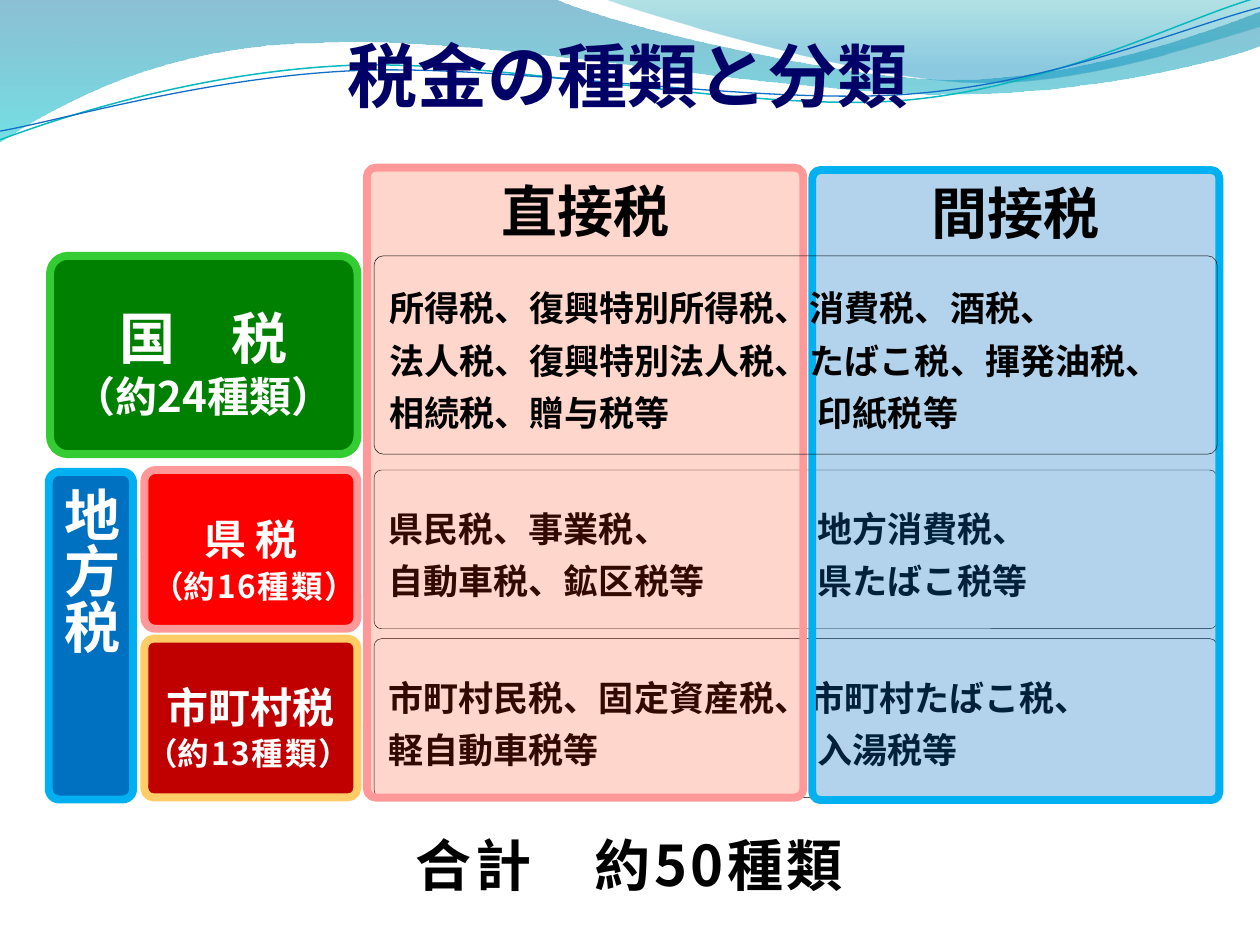
from dataclasses import dataclass
from typing import NamedTuple

from lxml import etree
from pptx import Presentation
from pptx.dml.color import RGBColor
from pptx.enum.shapes import MSO_SHAPE
from pptx.enum.text import MSO_ANCHOR, PP_ALIGN
from pptx.oxml.ns import qn
from pptx.util import Pt

ROUNDED = MSO_SHAPE.ROUNDED_RECTANGLE
TOP, MIDDLE, BOTTOM = MSO_ANCHOR.TOP, MSO_ANCHOR.MIDDLE, MSO_ANCHOR.BOTTOM
LEFT, CENTER = PP_ALIGN.LEFT, PP_ALIGN.CENTER


@dataclass(frozen=True)
class Theme:
    font: str = "Noto Sans CJK JP"
    black: str = "000000"
    white: str = "FFFFFF"
    navy: str = "000066"
    blue: str = "0070C0"
    sky: str = "00B0F0"
    orange: str = "FF3300"
    pink: str = "FF9999"
    green: str = "008000"
    lime: str = "33CC33"
    red: str = "FF0000"
    crimson: str = "C00000"
    amber: str = "FFCC66"
    title: float = 40
    heading: float = 32
    label: float = 24
    body: float = 20
    note: float = 18
    border: float = 4.5
    hairline: float = 0.25


THEME = Theme()


class Box(NamedTuple):
    left: float
    top: float
    width: float
    height: float


class Panel(NamedTuple):
    box: Box
    corner: float
    line: str
    fill: str = ""
    opacity: int = 100
    border: float = THEME.border


class Run(NamedTuple):
    text: str
    spacing: float = 0


class Line(NamedTuple):
    runs: list
    size: float


class Wave(NamedTuple):
    start: tuple
    curves: list
    line: str = ""
    width: float = 0
    stops: tuple = ()


ROW_LEFT, ROW_WIDTH, TAB = 213.8, 481.7, 245
NATIONAL_TOP, NATIONAL_HEIGHT = 146.2, 113.3
PREFECTURE_TOP, CITY_TOP, LOCAL_HEIGHT = 268.6, 365, 90.7

WAVES = [
    Wave((0, -0.7), [
        [(316.8, -0.7)], [(342.7, 12.2), (478.1, 45.4), (545.8, 45.4)],
        [(614.2, 45.4), (689.8, 18.7), (720, 6.5)], [(720.7, 25.9)],
        [(707.8, 31.7), (626.4, 54.7), (537.1, 54)],
        [(447.8, 54), (275, 20.2), (185, 24.5)],
        [(92.9, 25.2), (33.1, 59.8), (-0.7, 81.4)]],
        stops=((0, "0074A1", 45), (1, "00C6CF", 55))),
    Wave((344.9, -0.7), [
        [(366.5, 7.9), (491, 44.6), (553.7, 46.8)],
        [(616.3, 49.7), (691.9, 23), (720, 15.1)], [(720, 0)]],
        stops=((0, "00A1A9", 30), (0.8, "008BBF", 45))),
    Wave((0, 79.9), [
        [(34.6, 67), (113.8, 41), (199.4, 37.4)],
        [(284.4, 33.8), (427, 64.1), (513.4, 57.6)],
        [(599.8, 51.1), (675.4, 10.8), (718.6, -1.4)]], "0AB8BF", 0.85),
    Wave((0, 74.9), [
        [(33.8, 69.1), (118.1, 43.9), (203.8, 40.3)],
        [(290.2, 36.7), (429.8, 59.8), (516.2, 54)],
        [(601.9, 48.2), (677.5, 15.1), (720, 4.3)]], "0F6FC6", 0.75),
]


def set_opacity(shape, percents: list) -> None:
    """Give the colours of a shape's fill their opacities."""
    for color, percent in zip(shape._element.spPr.iter(qn("a:srgbClr")), percents):
        etree.SubElement(color, qn("a:alpha")).set("val", str(percent * 1000))


def draw_wave(slide, wave: Wave) -> None:
    """Draw a curved band or a curved line."""
    builder = slide.shapes.build_freeform(*map(Pt, wave.start))
    builder.add_line_segments([tuple(map(Pt, curve[-1])) for curve in wave.curves],
                              close=bool(wave.stops))
    shape = builder.convert_to_shape()
    shape.shadow.inherit = False
    segments = list(shape._element.spPr.iter(qn("a:lnTo")))
    for segment, curve in zip(segments, wave.curves):
        if len(curve) == 3:
            bezier = etree.Element(qn("a:cubicBezTo"))
            for x, y in curve:
                etree.SubElement(bezier, qn("a:pt"), x=str(Pt(x) - shape.left),
                                 y=str(Pt(y) - shape.top))
            segment.getparent().replace(segment, bezier)
    if wave.stops:
        shape.fill.gradient()
        shape.fill.gradient_angle = 270
        for stop, (position, color, _) in zip(shape.fill.gradient_stops, wave.stops):
            stop.position, stop.color.rgb = position, RGBColor.from_string(color)
        set_opacity(shape, [opacity for _, _, opacity in wave.stops])
        shape.line.fill.background()
    else:
        shape.fill.background()
        shape.line.color.rgb = RGBColor.from_string(wave.line)
        shape.line.width = Pt(wave.width)


def write(shape, lines: list, *, color: str = THEME.black, align=CENTER, anchor=MIDDLE,
          leading: float = 0, tab: float = 0, bottom: float = 3.6,
          vertical: bool = False, outline: bool = False) -> None:
    """Write formatted lines into a shape."""
    frame = shape.text_frame
    frame.word_wrap, frame.vertical_anchor = True, anchor
    frame.margin_bottom = Pt(bottom)
    if vertical:
        frame._txBody.bodyPr.set("vert", "eaVert")
    for index, line in enumerate(lines):
        paragraph = frame.add_paragraph() if index else frame.paragraphs[0]
        paragraph.alignment = align
        if leading:
            paragraph.line_spacing = Pt(leading)
        if tab and any("\t" in part.text for part in line.runs):
            tabs = etree.SubElement(paragraph._p.get_or_add_pPr(), qn("a:tabLst"))
            etree.SubElement(tabs, qn("a:tab"), pos=str(Pt(tab)), algn="l")
        for part in line.runs:
            run = paragraph.add_run()
            run.text = part.text
            font = run.font
            font.size, font.bold, font.name = Pt(line.size), True, THEME.font
            font.color.rgb = RGBColor.from_string(color)
            properties = run._r.get_or_add_rPr()
            etree.SubElement(properties, qn("a:ea"), typeface=THEME.font)
            if part.spacing:
                properties.set("spc", str(int(part.spacing * 100)))
            if outline:
                border = etree.Element(qn("a:ln"), w=str(Pt(0.5)))
                fill = etree.SubElement(border, qn("a:solidFill"))
                etree.SubElement(fill, qn("a:srgbClr"), val=THEME.white)
                properties.insert(0, border)


def draw_panel(slide, panel: Panel):
    """Draw a rounded panel and return it."""
    shape = slide.shapes.add_shape(ROUNDED, *map(Pt, panel.box))
    shape.adjustments[0] = panel.corner
    shape.shadow.inherit = False
    if panel.fill:
        shape.fill.solid()
        shape.fill.fore_color.rgb = RGBColor.from_string(panel.fill)
        if panel.opacity < 100:
            set_opacity(shape, [panel.opacity])
    else:
        shape.fill.background()
    shape.line.color.rgb = RGBColor.from_string(panel.line)
    shape.line.width = Pt(panel.border)
    return shape


def plain(text: str, size: float) -> Line:
    """Return a line made of a single run."""
    return Line([Run(text)], size)


def draw_row(slide, top: float, height: float, texts: list) -> None:
    """Draw a framed row of tax names across both columns."""
    box = Box(ROW_LEFT, top, ROW_WIDTH, height)
    shape = draw_panel(slide, Panel(box, 0.046, THEME.black, border=THEME.hairline))
    write(shape, [plain(text, THEME.body) for text in texts], align=LEFT, leading=30, tab=TAB)


def draw_text(slide, box: Box, line: Line, **style) -> None:
    """Draw a text box with one line."""
    write(slide.shapes.add_textbox(*map(Pt, box)), [line], **style)


def main() -> None:
    """Build the slide on kinds of tax."""
    presentation = Presentation()
    presentation.slide_width, presentation.slide_height = Pt(720), Pt(540)
    slide = presentation.slides.add_slide(presentation.slide_layouts[6])
    for wave in WAVES:
        draw_wave(slide, wave)
    draw_text(slide, Box(2.9, 15.1, 711.4, 55.4), plain("税金の種類と分類", THEME.title),
              color=THEME.navy, outline=True)
    draw_row(slide, PREFECTURE_TOP, LOCAL_HEIGHT,
             ["県民税、事業税、\t地方消費税、", "自動車税、鉱区税等\t県たばこ税等"])
    draw_row(slide, CITY_TOP, LOCAL_HEIGHT,
             ["市町村民税、固定資産税、市町村たばこ税、", "軽自動車税等\t入湯税等"])
    draw_text(slide, Box(167, 468.4, 385.2, 51.1), Line([Run("合計　約50種類", 2)], THEME.heading))
    for text, panel in (
            ("間接税", Panel(Box(464.2, 97.2, 232.6, 360), 0.02, THEME.sky, THEME.blue, 30)),
            ("直接税", Panel(Box(209.7, 95.8, 249.3, 360), 0.02, THEME.pink, THEME.orange, 20))):
        write(draw_panel(slide, panel), [plain(text, THEME.heading)], anchor=TOP)
    national = Panel(Box(28.6, NATIONAL_TOP, 175.7, NATIONAL_HEIGHT), 0.09, THEME.lime, THEME.green)
    write(draw_panel(slide, national),
          [plain("国　税", THEME.heading), plain("（約24種類）", THEME.label)],
          color=THEME.white, anchor=BOTTOM, bottom=16)
    draw_row(slide, NATIONAL_TOP, NATIONAL_HEIGHT,
             ["所得税、復興特別所得税、消費税、酒税、",
              "法人税、復興特別法人税、たばこ税、揮発油税、", "相続税、贈与税等\t印紙税等"])
    for text, top, corner, line, fill in (
            ("県 税", PREFECTURE_TOP, 0.071, THEME.pink, THEME.red),
            ("市町村税", CITY_TOP, 0.058, THEME.amber, THEME.crimson)):
        panel = Panel(Box(82.5, top, 121.7, LOCAL_HEIGHT), corner, line, fill)
        write(draw_panel(slide, panel), [plain(text, THEME.label)], color=THEME.white, bottom=16)
    local = Panel(Box(27.9, 269.7, 48.2, 187.2), 0.123, THEME.sky, THEME.blue)
    write(draw_panel(slide, local), [plain("地方税", THEME.heading)], color=THEME.white, vertical=True)
    for text, left, top in (("約16種類", 65.3, 315.2), ("約13種類", 61.9, 410.4)):
        draw_text(slide, Box(left, top, 159.8, 39.6),
                  Line([Run("（"), Run(text, 1), Run("）")], THEME.note), color=THEME.white)
    presentation.save("out.pptx")


if __name__ == "__main__":
    main()
